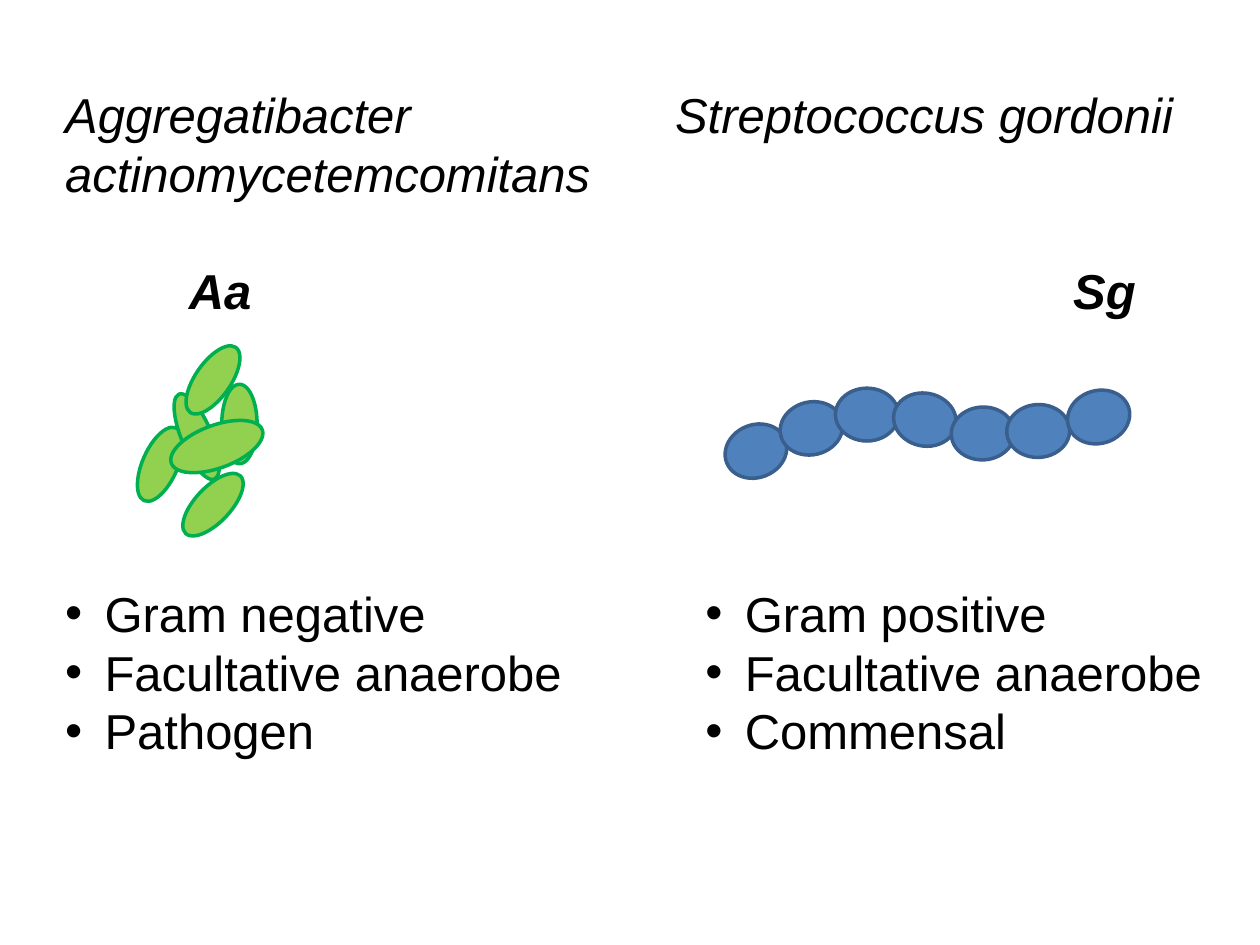
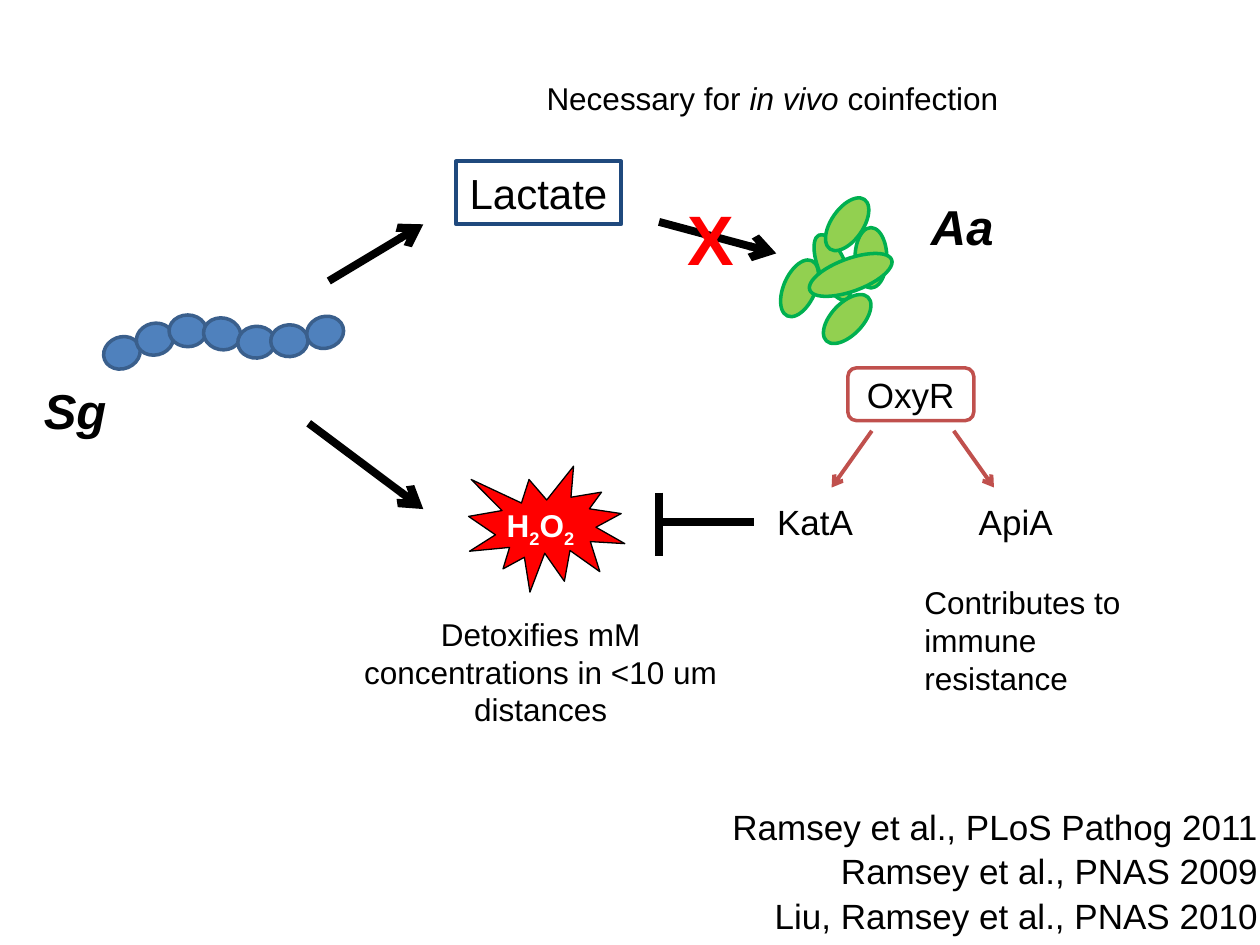
from dataclasses import dataclass
from typing import NamedTuple

from lxml import etree
from pptx import Presentation
from pptx import util as u
from pptx.dml import color
from pptx.enum import shapes, text
from pptx.oxml import ns

Pt = u.Pt
Shape = shapes.MSO_SHAPE
Align = text.PP_ALIGN


@dataclass(frozen=True)
class Theme:
    font: str = "Arial"
    black: str = "000000"
    white: str = "FFFFFF"
    red: str = "FF0000"
    rod_fill: str = "92D050"
    rod_line: str = "00B050"
    coccus_fill: str = "4F81BD"
    coccus_line: str = "3A5F8C"
    lactate_line: str = "1F497D"
    regulator_line: str = "C0504D"
    note: float = 18
    label: float = 20
    molecule: float = 24
    heading: float = 28
    cross: float = 40
    bullet_indent: float = 22.5
    thin: float = 0.75
    outline: float = 2
    medium: float = 2.25
    heavy: float = 4.5


theme = Theme()


class Box(NamedTuple):
    left: float
    top: float
    width: float
    height: float

    def inner(self, left, top, width, height):
        return Box(self.left + left, self.top + top, width, height)


class Colony(NamedTuple):
    width: float
    height: float
    fill: str
    line: str
    cells: list


RODS = Colony(65.5, 116.6, theme.rod_fill, theme.rod_line, [
    (10.1, 70.9, 20.2, 45.4, 23.7),
    (31, 55.1, 17.3, 52.6, 337.3),
    (55.4, 47.9, 20.2, 45.4, 0),
    (42.5, 60.8, 24.5, 55.4, 69.8),
    (40.3, 94, 20.2, 45.4, 43.5),
    (40.3, 22.7, 20.2, 45.4, 34.9),
])
CHAIN = Colony(231.8, 51.1, theme.coccus_fill, theme.coccus_line, [
    (x, y, 36, 30.2, turn) for x, y, turn in [
        (18, 36, 338.3), (49.7, 23, 346.8), (81.4, 15.1, 0), (114.5, 18, 12),
        (147.6, 25.9, 357), (179.3, 24.5, 357), (213.8, 16.5, 342.9)]
])


def rgb(value):
    return color.RGBColor.from_string(value)


def points(values):
    return [Pt(value) for value in values]


def add_bullet(para):
    properties = para._p.get_or_add_pPr()
    indent = Pt(theme.bullet_indent)
    properties.set("marL", str(indent))
    properties.set("indent", str(-indent))
    etree.SubElement(properties, ns.qn("a:buFont")).set("typeface", theme.font)
    etree.SubElement(properties, ns.qn("a:buChar")).set("char", "•")


def write(frame, paragraphs, size=theme.heading, ink=theme.black, bold=False,
          italic=False, align=Align.LEFT, bullets=False, wrap=False,
          anchor=text.MSO_ANCHOR.TOP):
    frame.word_wrap = wrap
    frame.vertical_anchor = anchor
    for index, content in enumerate(paragraphs):
        para = frame.paragraphs[0] if index == 0 else frame.add_paragraph()
        para.alignment = align
        if bullets:
            add_bullet(para)
        pieces = [(content, {})] if isinstance(content, str) else content
        for words, changes in pieces:
            span = para.add_run()
            span.text = words
            span.font.name = theme.font
            span.font.size = Pt(size)
            span.font.bold = bold
            span.font.italic = changes.get("italic", italic)
            span.font.color.rgb = rgb(ink)
            if "baseline" in changes:
                span.font._element.set("baseline", str(changes["baseline"]))


def add_text(parent, box, *paragraphs, **style):
    frame = parent.shapes.add_textbox(*points(box)).text_frame
    write(frame, paragraphs, **style)


def add_figure(parent, kind, box, line, width=theme.outline, fill=None, turn=0):
    figure = parent.shapes.add_shape(kind, *points(box))
    figure.shadow.inherit = False
    figure.rotation = turn
    if fill:
        figure.fill.solid()
        figure.fill.fore_color.rgb = rgb(fill)
    else:
        figure.fill.background()
    figure.line.color.rgb = rgb(line)
    figure.line.width = Pt(width)
    return figure


def add_line(parent, start, end, ink=theme.black, width=theme.heavy, arrow=True):
    line = parent.shapes.add_connector(
        shapes.MSO_CONNECTOR.STRAIGHT, *points(start + end))
    line.line.color.rgb = rgb(ink)
    line.line.width = Pt(width)
    if arrow:
        outline = line.line._get_or_add_ln()
        etree.SubElement(outline, ns.qn("a:tailEnd")).set("type", "arrow")
    etree.SubElement(line._element.spPr, ns.qn("a:effectLst"))


def draw_colony(page, box, colony):
    group = page.shapes.add_group_shape()
    across, down = box.width / colony.width, box.height / colony.height
    for x, y, width, height, turn in colony.cells:
        sideways = 45 <= turn % 180 < 135
        width *= down if sideways else across
        height *= across if sideways else down
        cell = box.inner(x * across - width / 2, y * down - height / 2, width, height)
        add_figure(group, Shape.OVAL, cell, colony.line, fill=colony.fill, turn=turn)


def draw_abbreviation(page, box, name):
    add_text(page, box, name, bold=True, italic=True)


def draw_species(page, box, name, short, short_left, colony, colony_at, traits,
                 traits_left=0):
    add_text(page, box.inner(0, 0, box.width, 41 * len(name)), *name, italic=True)
    draw_abbreviation(page, box.inner(short_left, 100.8, 51, 41), short)
    draw_colony(page, box.inner(*colony_at, colony.width, colony.height), colony)
    add_text(page, box.inner(traits_left, 285.1, 301.7, 108.7), *traits, bullets=True)


def draw_lactate(page, box):
    add_text(page, box.inner(44.6, 0, 275, 28.8),
             [("Necessary for ", {}), ("in vivo", {"italic": True}),
              (" coinfection", {})], size=theme.note)
    lactate = add_figure(page, Shape.RECTANGLE, box.inner(0, 50.4, 94.3, 36),
                         theme.lactate_line, theme.medium)
    write(lactate.text_frame, ["Lactate"], size=theme.molecule, align=Align.CENTER)
    add_line(page, (box.left + 116, box.top + 85), (box.left + 183, box.top + 103))
    add_text(page, box.inner(125.3, 66.2, 41.8, 55.4), "X", size=theme.cross,
             ink=theme.red, bold=True)


def draw_peroxide(page, box):
    burst = page.shapes.add_group_shape()
    add_figure(burst, Shape.EXPLOSION1, box.inner(77, 0, 89.3, 72),
               theme.black, theme.thin, theme.red)
    subscript = ("2", {"baseline": -25000})
    add_text(burst, box.inner(90.7, 19.4, 54.7, 28.8),
             [("H", {}), subscript, ("O", {}), subscript], size=theme.note,
             ink=theme.white, bold=True, align=Align.CENTER)
    add_text(page, box.inner(0, 81.4, 236.2, 72.7),
             "Detoxifies mM concentrations in <10 um distances",
             size=theme.note, align=Align.CENTER, wrap=True)
    inhibition = page.shapes.add_group_shape()
    bar, middle = box.left + 185.8, box.top + 31.7
    add_line(inhibition, (bar + 54, middle), (bar, middle), arrow=False)
    add_line(inhibition, (bar, middle - 16.6), (bar, middle + 19.4), arrow=False)


def draw_regulation(page, box):
    regulator = add_figure(page, Shape.ROUNDED_RECTANGLE, box.inner(47.5, 0, 72, 30.2),
                           theme.regulator_line, fill=theme.white)
    write(regulator.text_frame, ["OxyR"], size=theme.label, align=Align.CENTER,
          wrap=True, anchor=text.MSO_ANCHOR.MIDDLE)
    center = box.left + 84.6
    for side in (-1, 1):
        add_line(page, (center + side * 23.4, box.top + 36),
                 (center + side * 46.4, box.top + 68.4),
                 theme.regulator_line, theme.medium)
    for left, gene in ((0, "KatA"), (115.2, "ApiA")):
        add_text(page, box.inner(left, 72, 58, 31.7), gene, size=theme.label)
    add_text(page, box.inner(84.2, 119.5, 155.5, 72.7),
             "Contributes to immune resistance", size=theme.note, wrap=True)


def draw_citations(page, box, citations):
    pitch = box.height / len(citations)
    for row, citation in enumerate(citations):
        add_text(page, box.inner(0, row * pitch, box.width, 31.7), citation,
                 size=theme.label, align=Align.RIGHT, wrap=True)


def build_comparison(page):
    draw_species(page, Box(30.2, 44.6, 318.2, 394),
                 ["Aggregatibacter", "actinomycetemcomitans"], "Aa", 70.6,
                 RODS, (51.2, 149.8),
                 ["Gram negative", "Facultative anaerobe", "Pathogen"])
    draw_species(page, Box(378.7, 44.6, 302.4, 394),
                 ["Streptococcus gordonii"], "Sg", 227.5,
                 CHAIN, (35.3, 177.2),
                 ["Gram positive", "Facultative anaerobe", "Commensal"], 17.3)


def build_interaction(page):
    draw_colony(page, Box(447.8, 110.9, 59, 88.6), RODS)
    draw_colony(page, Box(59, 180, 137.5, 30.7), CHAIN)
    draw_abbreviation(page, Box(18, 213.8, 50.4, 41), "Sg")
    draw_abbreviation(page, Box(524.9, 108.7, 51, 41), "Aa")
    add_line(page, (187.9, 160.6), (241.9, 128.2))
    add_line(page, (176.4, 241.9), (241.9, 290.9))
    draw_lactate(page, Box(260.6, 41.8, 320, 122))
    draw_peroxide(page, Box(190.8, 266.4, 240, 154))
    draw_regulation(page, Box(437, 210.2, 240, 192))
    draw_citations(page, Box(396, 456.5, 330, 76.7), [
        "Ramsey et al., PLoS Pathog 2011",
        "Ramsey et al., PNAS 2009",
        "Liu, Ramsey et al., PNAS 2010",
    ])


def main():
    deck = Presentation()
    deck.slide_width, deck.slide_height = Pt(720), Pt(540)
    for build in (build_comparison, build_interaction):
        build(deck.slides.add_slide(deck.slide_layouts[6]))
    deck.save("out.pptx")


if __name__ == "__main__":
    main()
